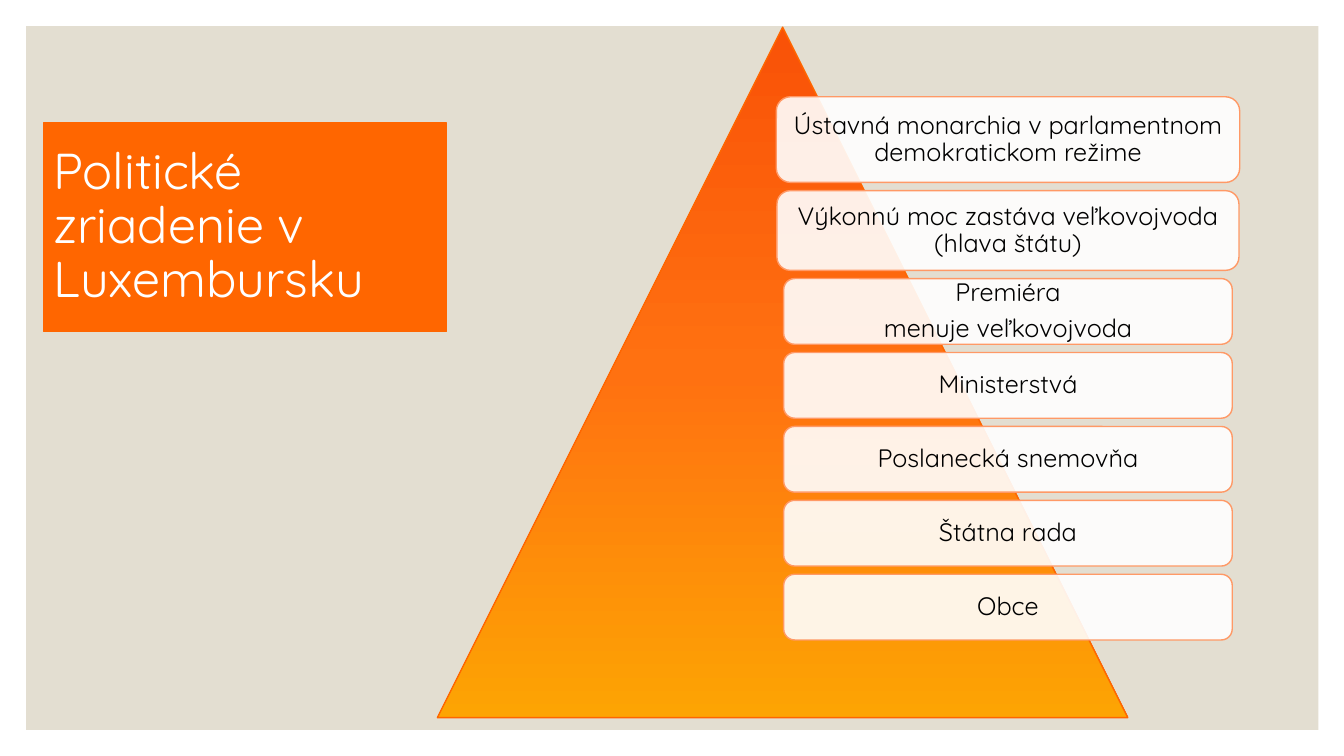
from copy import deepcopy

from lxml import etree
from pptx import Presentation
from pptx.dml.color import RGBColor
from pptx.enum.shapes import MSO_SHAPE
from pptx.enum.text import MSO_ANCHOR, PP_ALIGN
from pptx.oxml.ns import qn
from pptx.util import Pt

RECT = MSO_SHAPE.RECTANGLE
ROUND = MSO_SHAPE.ROUNDED_RECTANGLE
PEAK = MSO_SHAPE.ISOSCELES_TRIANGLE
LEFT, CENTER = PP_ALIGN.LEFT, PP_ALIGN.CENTER
MIDDLE = MSO_ANCHOR.MIDDLE

WHITE = RGBColor(0xFF, 0xFF, 0xFF)
BLACK = RGBColor(0x00, 0x00, 0x00)
SAND = RGBColor(0xE3, 0xDE, 0xD1)
ORANGE = RGBColor(0xFF, 0x66, 0x00)
PEACH = RGBColor(0xFF, 0x99, 0x66)
FIRE = [RGBColor(0xF9, 0x52, 0x07), RGBColor(0xFF, 0x71, 0x11),
        RGBColor(0xFD, 0xA4, 0x03)]

TITLE = "Politické zriadenie v Luxembursku"
# Width, height and lines of text for each level of power
LEVELS = [
    (331, 61.2, ["Ústavná monarchia v parlamentnom demokratickom režime"]),
    (330, 56.9, ["Výkonnú moc zastáva veľkovojvoda (hlava štátu)"]),
    (320.4, 46.9, ["Premiéra", "menuje veľkovojvoda"]),
    (320.4, 46.9, ["Ministerstvá"]),
    (320.4, 46.9, ["Poslanecká snemovňa"]),
    (320.4, 46.9, ["Štátna rada"]),
    (320.4, 46.9, ["Obce"]),
]
AXIS, TOP, GAP = 720, 69.1, 5.9


class Painter:
    """Draws on one slide in a single style; lengths are in points."""

    font = "Quicksand"

    def __init__(self, slide):
        self.slide = slide

    def shape(self, kind, x, y, w, h, fill=None, line=None):
        item = self.slide.shapes.add_shape(kind, Pt(x), Pt(y), Pt(w), Pt(h))
        item.shadow.inherit = False
        if fill is not None:
            item.fill.solid()
            item.fill.fore_color.rgb = fill
        if line is None:
            item.line.fill.background()
        else:
            item.line.color.rgb = line
            item.line.width = Pt(1)
        return item

    def blend(self, item, colors):
        """Fill from top to bottom with evenly spaced colours."""
        item.fill.gradient()
        item.fill.gradient_angle = 270
        stops = item.element.spPr.find(qn("a:gradFill")).find(qn("a:gsLst"))
        while len(stops) < len(colors):
            stops.append(deepcopy(stops[0]))
        for i, (stop, color) in enumerate(zip(item.fill.gradient_stops, colors)):
            stop.color.rgb = color
            stop.position = i / (len(colors) - 1)

    def fade(self, item, percent):
        """Set the opacity of a solid fill."""
        color = item.element.spPr.find(qn("a:solidFill")).find(qn("a:srgbClr"))
        etree.SubElement(color, qn("a:alpha"), val=str(percent * 1000))

    def text(self, item, lines, size, color, align):
        frame = item.text_frame
        frame.word_wrap = True
        frame.vertical_anchor = MIDDLE
        frame.text = "\n".join(lines)
        for part in frame.paragraphs:
            part.alignment = align
            part.line_spacing = 0.9
            part.font.name = self.font
            part.font.size = Pt(size)
            part.font.color.rgb = color
        for part in frame.paragraphs[1:]:
            part.space_before = Pt(6)

    def level(self, y, w, h, lines):
        box = self.shape(ROUND, AXIS - w / 2, y, w, h, WHITE, PEACH)
        self.fade(box, 90)
        self.text(box, lines, 18, BLACK, CENTER)
        frame = box.text_frame
        frame.margin_left = frame.margin_right = Pt(5)
        frame.margin_top = frame.margin_bottom = Pt(5)


def main():
    deck = Presentation()
    deck.slide_width, deck.slide_height = Pt(960), Pt(540)
    paint = Painter(deck.slides.add_slide(deck.slide_layouts[6]))

    paint.shape(RECT, 18.7, 18.7, 923, 502.6, SAND)
    title = paint.shape(RECT, 31, 87.8, 288, 149, ORANGE, ORANGE)
    paint.text(title, [TITLE], 36, WHITE, LEFT)

    peak = paint.shape(PEAK, 312.4, 19.4, 493.2, 493.2, line=ORANGE)
    paint.blend(peak, FIRE)

    y = TOP
    for w, h, lines in LEVELS:
        paint.level(y, w, h, lines)
        y += h + GAP

    deck.save("out.pptx")


if __name__ == "__main__":
    main()
